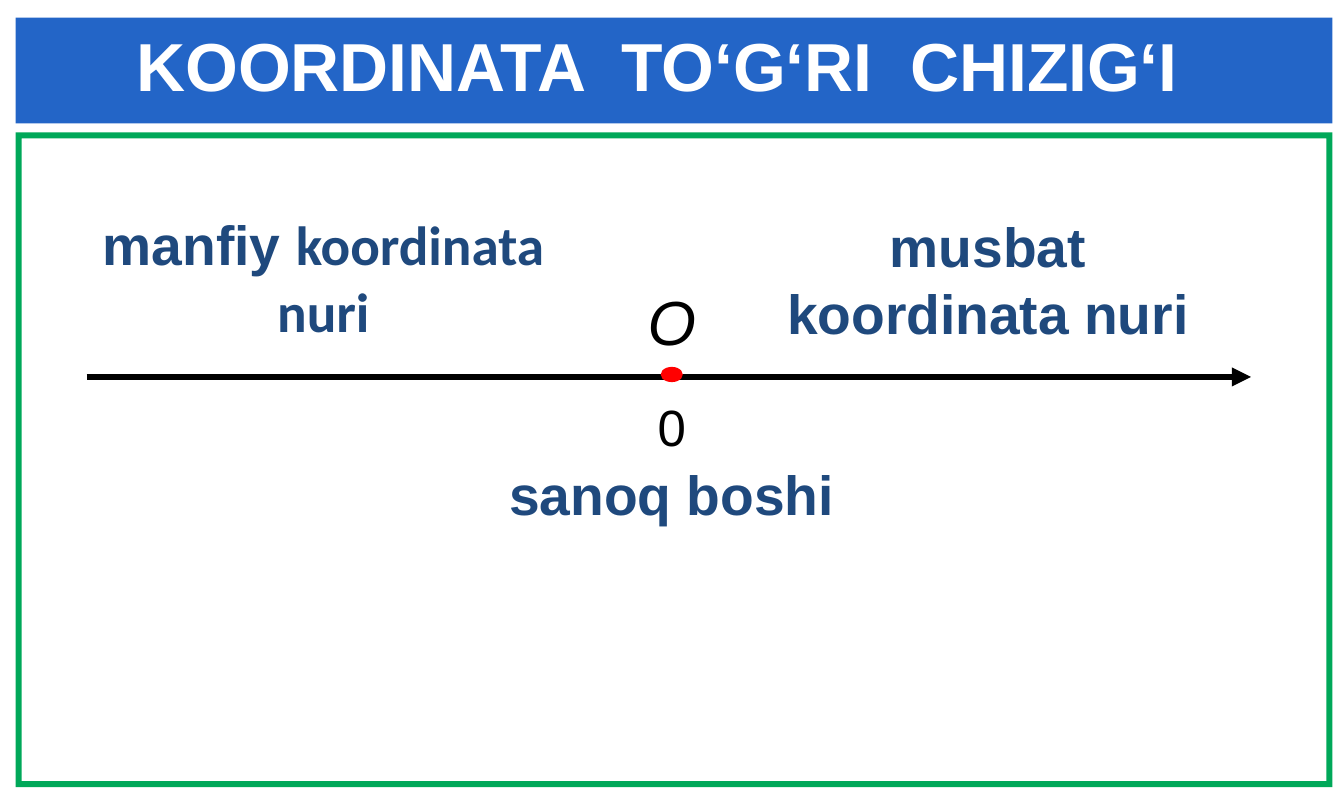
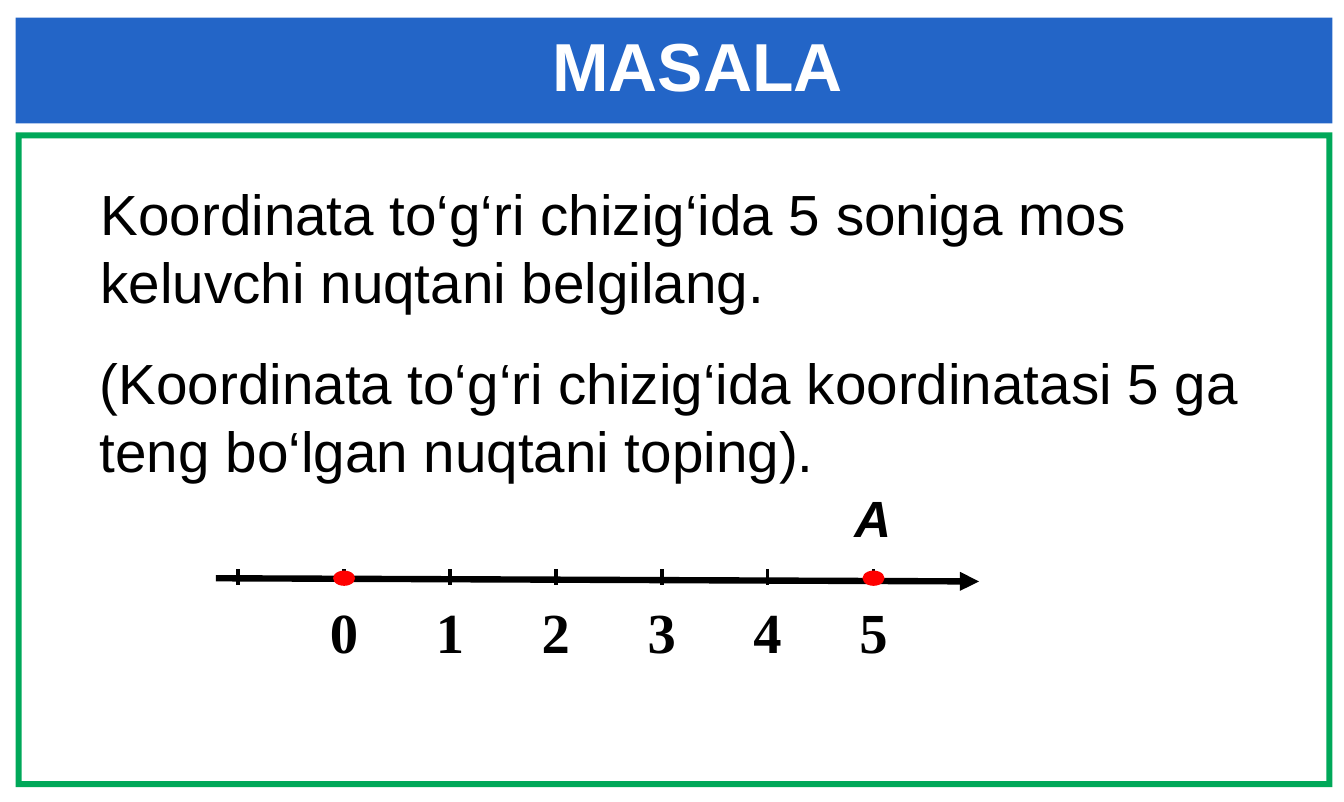
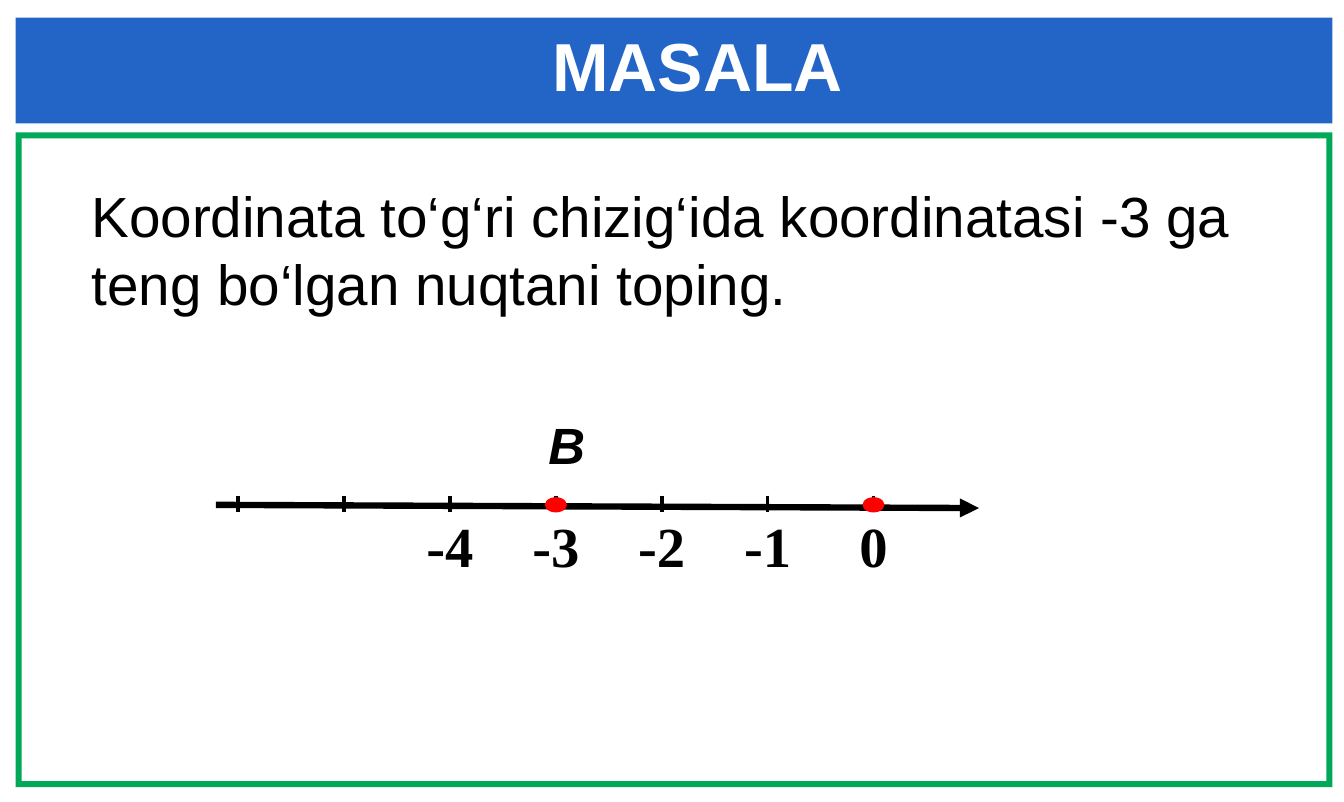
from lxml.etree import SubElement
from pptx import Presentation
from pptx.dml.color import RGBColor
from pptx.enum.shapes import MSO_CONNECTOR, MSO_SHAPE
from pptx.enum.text import PP_ALIGN
from pptx.oxml.ns import qn
from pptx.util import Cm, Pt

COLORS = {
    "band": "2365C7",
    "frame": "00A859",
    "label": "1F497D",
    "ink": "000000",
    "title": "FFFFFF",
    "dot": "FF0000",
}
WIDTH, HEIGHT = 33.51, 20
MARGIN, PANEL_WIDTH = 0.39, 32.83
FRAME_HEIGHT, FRAME_THICKNESS = 16.33, 0.15
TICK_START, TICK_STEP, TICK_COUNT = 5.94, 2.64, 7
LABEL = {"size": 39, "color": "label", "bold": True}


def rgb(name):
    return RGBColor.from_string(COLORS[name])


def write(p, text, size=40, font="Arial", color="ink", bold=False, italic=False):
    r = p.add_run()
    r.text = text
    r.font.size = Pt(size)
    r.font.name = font
    r.font.color.rgb = rgb(color)
    r.font.bold = bold
    r.font.italic = italic


def add_box(s, x, y, w, h, align=PP_ALIGN.CENTER):
    tf = s.shapes.add_textbox(Cm(x), Cm(y), Cm(w), Cm(h)).text_frame
    tf.word_wrap = True
    p = tf.paragraphs[0]
    p.alignment = align
    return p


def add_centered(s, text, x, y, w, h, **fmt):
    write(add_box(s, x - w / 2, y, w, h), text, **fmt)


def add_filled(s, kind, x, y, w, h, color):
    sp = s.shapes.add_shape(kind, Cm(x), Cm(y), Cm(w), Cm(h))
    sp.shadow.inherit = False
    sp.fill.solid()
    sp.fill.fore_color.rgb = rgb(color)
    sp.line.fill.background()
    return sp


def add_line(s, x1, y1, x2, y2, width, arrow=False):
    c = s.shapes.add_connector(MSO_CONNECTOR.STRAIGHT, Cm(x1), Cm(y1), Cm(x2), Cm(y2))
    c.line.color.rgb = rgb("ink")
    c.line.width = Pt(width)
    if arrow:
        SubElement(c.get_or_add_ln(), qn("a:tailEnd"), type="triangle")
    SubElement(c.element.spPr, qn("a:effectLst"))


def add_dot(s, x, y):
    w, h = 0.55, 0.38
    add_filled(s, MSO_SHAPE.OVAL, x - w / 2, y - h / 2, w, h, "dot")


def add_title(s, text, x=1.27, align=PP_ALIGN.CENTER):
    p = add_box(s, x, 0.46, WIDTH - x, 2.31, align)
    write(p, text, size=48, color="title", bold=True)


def add_task(s, text, x, y):
    write(add_box(s, x, y, 29.03, 3.68, PP_ALIGN.LEFT), text)


def add_number_line(s, y, numbers, dots, point, point_x, label_gap):
    ticks = [TICK_START + i * TICK_STEP for i in range(TICK_COUNT)]
    number_x = dict(zip(numbers, ticks[-len(numbers):]))
    add_line(s, 5.38, y, 24.41, y + 0.08, 4.5, arrow=True)
    for x in ticks:
        add_line(s, x, y - 0.23, x, y + 0.18, 2.5)
    for number, x in number_x.items():
        add_centered(s, number, x, y + label_gap, 2.2, 1.8, font="Times New Roman", bold=True)
    for number in dots:
        add_dot(s, number_x[number], y)
    add_centered(s, point, point_x, y - 2.41, 1.8, 1.85, size=36, bold=True, italic=True)


def move_panels_to_layout(s, layout):
    for ph in list(layout.placeholders):
        layout.shapes.element.remove(ph.element)
    frame = add_filled(s, MSO_SHAPE.FRAME, MARGIN, 3.3, PANEL_WIDTH, FRAME_HEIGHT, "frame")
    frame.adjustments[0] = FRAME_THICKNESS / FRAME_HEIGHT
    band = add_filled(s, MSO_SHAPE.RECTANGLE, MARGIN, 0.44, PANEL_WIDTH, 2.64, "band")
    for sp in (frame, band):
        layout.shapes.element.append(sp.element)


def fill_rays(s):
    origin_x, axis_y = 16.75, 9.4
    add_title(s, "KOORDINATA  TO‘G‘RI  CHIZIG‘I", x=3.15, align=PP_ALIGN.LEFT)
    add_line(s, 2.16, axis_y, 31.19, axis_y, 4.5, arrow=True)
    add_dot(s, origin_x, axis_y - 0.06)
    add_centered(s, "0", origin_x, 9.73, 2, 1.8, size=36)
    add_centered(s, "O", origin_x, 6.93, 2.2, 2.13, size=44, italic=True)
    write(add_box(s, 18.74, 5.18, 11.79, 3.6), "musbat koordinata nuri", **LABEL)
    p = add_box(s, 2.17, 5.13, 11.79, 3.6)
    write(p, "manfiy ", **LABEL)
    write(p, "koordinata nuri", font="Calibri", **LABEL)
    add_centered(s, "sanoq boshi", origin_x, 11.35, 12.17, 1.93, **LABEL)


def fill_positive_task(s):
    add_title(s, "MASALA")
    add_task(s, "Koordinata to‘g‘ri chizig‘ida 5 soniga mos keluvchi nuqtani belgilang.", 2.26, 4.33)
    add_task(s, "(Koordinata to‘g‘ri chizig‘ida koordinatasi 5 ga teng bo‘lgan nuqtani toping).", 2.24, 8.56)
    add_number_line(s, 14.42, ["0", "1", "2", "3", "4", "5"], ["0", "5"], "А", 21.76, 0.34)


def fill_negative_task(s):
    add_title(s, "MASALA")
    add_task(s, "Koordinata to‘g‘ri chizig‘ida koordinatasi -3 ga teng bo‘lgan nuqtani toping.", 2.03, 4.39)
    add_number_line(s, 12.59, ["-4", "-3", "-2", "-1", "0"], ["-3", "0"], "B", 14.13, 0.02)


def main():
    prs = Presentation()
    prs.slide_width = Cm(WIDTH)
    prs.slide_height = Cm(HEIGHT)
    layout = prs.slide_layouts[6]
    slides = [prs.slides.add_slide(layout) for _ in range(3)]
    move_panels_to_layout(slides[0], layout)
    for s, fill in zip(slides, (fill_rays, fill_positive_task, fill_negative_task)):
        fill(s)
    prs.save("out.pptx")


if __name__ == "__main__":
    main()
